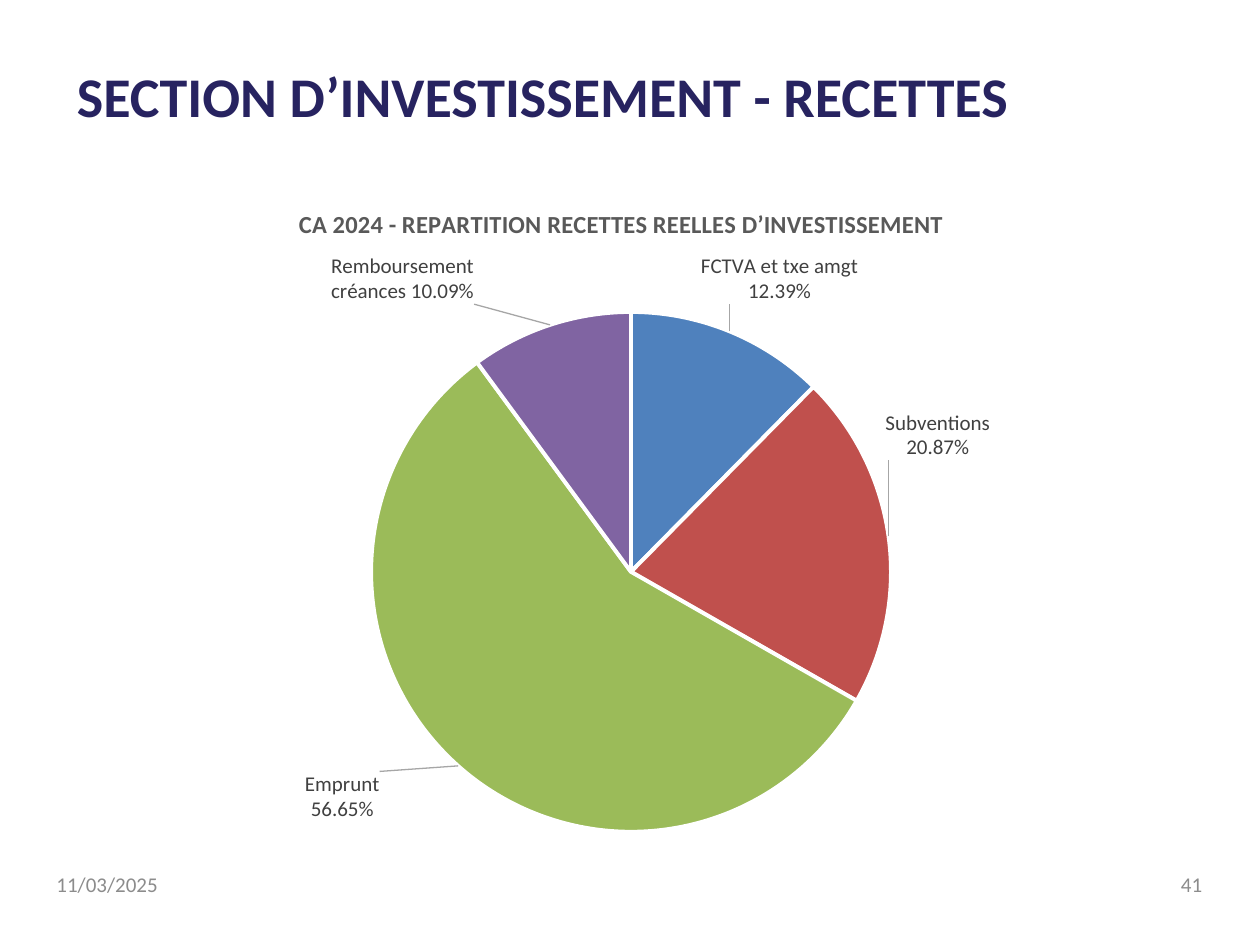
from lxml.etree import SubElement
from pptx import Presentation
from pptx.chart.data import CategoryChartData
from pptx.dml.color import RGBColor
from pptx.enum.chart import XL_CHART_TYPE, XL_LABEL_POSITION
from pptx.enum.text import MSO_ANCHOR, PP_ALIGN
from pptx.oxml import parse_xml
from pptx.oxml.ns import nsdecls, qn
from pptx.util import Inches, Pt

NAVY = RGBColor(0x27, 0x23, 0x60)
GREY = RGBColor(0x8C, 0x8C, 0x8C)
TITLE_GREY = RGBColor(0x59, 0x59, 0x59)
LABEL_GREY = RGBColor(0x40, 0x40, 0x40)
BLACK = RGBColor(0, 0, 0)
WHITE = RGBColor(0xFF, 0xFF, 0xFF)
BLUE = RGBColor(0x4F, 0x81, 0xBD)
RED = RGBColor(0xC0, 0x50, 0x4D)
GREEN = RGBColor(0x9B, 0xBB, 0x59)
PURPLE = RGBColor(0x80, 0x64, 0xA2)

TITLE = "SECTION D’INVESTISSEMENT - RECETTES"
CHART_TITLE = "CA 2024 - REPARTITION RECETTES REELLES D’INVESTISSEMENT"
TITLE_BOX = (0.51, 0.52, 8.19, 0.47)
CHART_BOX = (0.75, 1.39, 8.35, 5.43)
PLOT_LAYOUT = {"x": 0.09, "y": 0.2, "w": 0.84, "h": 0.76}
CHART_TITLE_LAYOUT = {"x": 0.19, "y": 0.04}
FOOTERS = [
    ("11/03/2025", 0.35, PP_ALIGN.LEFT),
    ("41", 7.31, PP_ALIGN.RIGHT),
]
SLICES = [
    ("FCTVA et txe amgt", 0.1239, BLUE, "FCTVA et txe amgt\n12.39%", (-0.03, -0.03)),
    ("Subventions", 0.2087, RED, "Subventions\n20.87%", (-0.01, -0.11)),
    ("Emprunt", 0.5665, GREEN, "Emprunt\n56.65%", (-0.07, 0)),
    ("Remboursement créances", 0.1009, PURPLE,
     "Remboursement\ncréances 10.09%", (-0.07, -0.02)),
]


def style_font(font, size, color, bold=False):
    """Apply the slide's typeface with the given size, colour and weight."""
    values = {"name": "Calibri", "size": Pt(size), "bold": bold}
    for name, value in values.items():
        setattr(font, name, value)
    font.color.rgb = color


def manual_layout(values, inner=False):
    """Return a chart layout element holding the given fractions."""
    layout = parse_xml(f"<c:layout {nsdecls('c')}><c:manualLayout/></c:layout>")
    settings = {"layoutTarget": "inner"} if inner else {}
    if "w" in values or inner or values is CHART_TITLE_LAYOUT:
        settings.update(xMode="edge", yMode="edge")
    for tag, value in {**settings, **values}.items():
        SubElement(layout[0], qn(f"c:{tag}")).set("val", str(value))
    return layout


def replace_layout(parent, layout, predecessor):
    """Put a layout in a chart part, after the predecessor if there is one."""
    for old in parent.findall(qn("c:layout")):
        parent.remove(old)
    before = parent.find(qn(predecessor))
    if before is None:
        parent.insert(0, layout)
    else:
        before.addnext(layout)


def add_footer(slide, text, left, alignment):
    """Add one line of small grey text at the foot of the slide."""
    box = slide.shapes.add_textbox(Inches(left), Inches(6.82), Inches(2.33), Inches(0.4))
    frame = box.text_frame
    frame.word_wrap = True
    frame.vertical_anchor = MSO_ANCHOR.MIDDLE
    paragraph = frame.paragraphs[0]
    paragraph.text = text
    paragraph.alignment = alignment
    style_font(paragraph.runs[0].font, 12, GREY)


def add_pie(slide):
    """Add the pie chart with its title, slices and placed labels."""
    data = CategoryChartData(number_format="0.00%")
    data.categories = [row[0] for row in SLICES]
    data.add_series("Series 1", [row[1] for row in SLICES])
    chart = slide.shapes.add_chart(
        XL_CHART_TYPE.PIE, *map(Inches, CHART_BOX), data).chart
    style_font(chart.font, 10, BLACK)
    chart.has_legend = False
    chart.has_title = True
    chart.chart_title.text_frame.text = CHART_TITLE
    style_font(chart.chart_title.text_frame.paragraphs[0].runs[0].font, 14, TITLE_GREY, True)
    title_element = chart.chart_title._element
    replace_layout(title_element, manual_layout(CHART_TITLE_LAYOUT), "c:tx")
    plot = chart.plots[0]
    plot.vary_by_categories = True
    replace_layout(plot._element.getparent(), manual_layout(PLOT_LAYOUT, True), "c:none")

    series = plot.series[0]
    for index, (_, _, color, text, (x, y)) in enumerate(SLICES):
        point = series.points[index]
        point.format.fill.solid()
        point.format.fill.fore_color.rgb = color
        point.format.line.color.rgb = WHITE
        point.format.line.width = Pt(2.25)
        label = point.data_label
        label.text_frame.text = text
        label.position = XL_LABEL_POSITION.OUTSIDE_END
        for paragraph in label.text_frame.paragraphs:
            for run in paragraph.runs:
                style_font(run.font, 12, LABEL_GREY)
        element = label._dLbl
        replace_layout(element, manual_layout({"x": x, "y": y}), "c:idx")

    labels = series.data_labels
    labels.show_value = True
    labels.show_category_name = True
    labels.number_format = "0.00%"
    labels.number_format_is_linked = False
    style_font(labels.font, 12, LABEL_GREY)
    leader = labels._element.find(qn("c:showLeaderLines"))
    if leader is None:
        leader = SubElement(labels._element, qn("c:showLeaderLines"))
    leader.set("val", "1")
    leader.addnext(parse_xml(
        f'<c:leaderLines {nsdecls("c", "a")}><c:spPr><a:ln w="9525"><a:solidFill>'
        '<a:srgbClr val="A6A6A6"/></a:solidFill></a:ln></c:spPr></c:leaderLines>'))


def main():
    """Build the investment revenue slide."""
    presentation = Presentation()
    presentation.slide_width, presentation.slide_height = Inches(10), Inches(7.5)
    slide = presentation.slides.add_slide(presentation.slide_layouts[5])
    title = slide.shapes.title
    title.left, title.top, title.width, title.height = map(Inches, TITLE_BOX)
    title.text_frame.text = TITLE
    title.text_frame.vertical_anchor = MSO_ANCHOR.MIDDLE
    paragraph = title.text_frame.paragraphs[0]
    paragraph.alignment = PP_ALIGN.LEFT
    style_font(paragraph.runs[0].font, 32, NAVY, True)
    for footer in FOOTERS:
        add_footer(slide, *footer)
    add_pie(slide)
    presentation.save("out.pptx")


if __name__ == "__main__":
    main()
